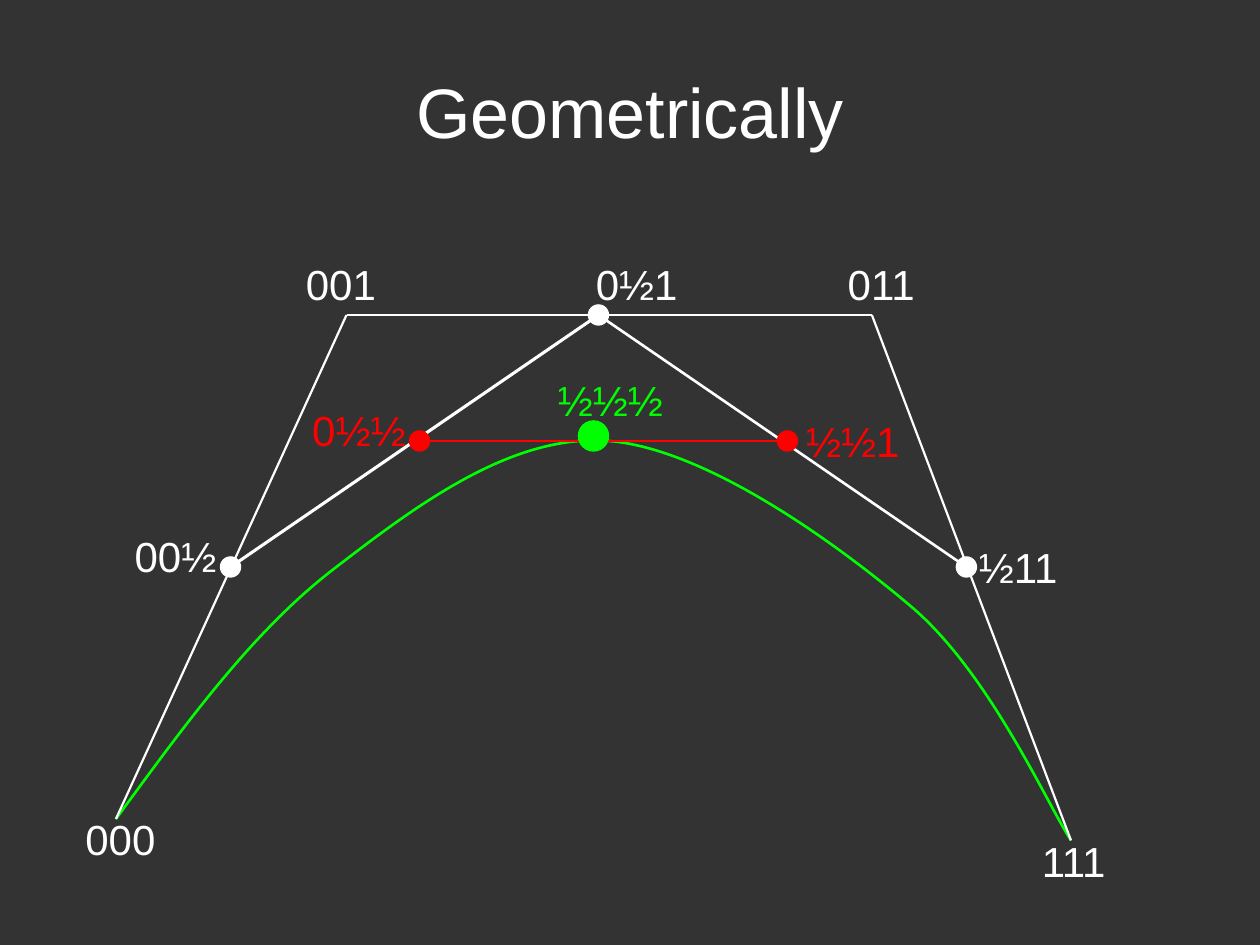
from lxml import etree
from pptx import Presentation
from pptx.dml.color import RGBColor
from pptx.enum.shapes import MSO_CONNECTOR, MSO_SHAPE
from pptx.enum.text import MSO_ANCHOR, MSO_AUTO_SIZE, PP_ALIGN
from pptx.oxml.ns import qn
from pptx.util import Inches, Pt

LINE = MSO_CONNECTOR.STRAIGHT
OVAL = MSO_SHAPE.OVAL
TOP, MIDDLE = MSO_ANCHOR.TOP, MSO_ANCHOR.MIDDLE
GROW, FIXED = MSO_AUTO_SIZE.SHAPE_TO_FIT_TEXT, MSO_AUTO_SIZE.NONE
LEFT, CENTER = PP_ALIGN.LEFT, PP_ALIGN.CENTER

WHITE, RED, GREEN, DARK = "FFFFFF", "FF0000", "00FF00", "333333"

HULL = [(0.42, 4.5), (2.25, 0.5), (6.42, 0.5), (8, 4.67)]
MIDS = [(1.33, 2.5), (4.25, 0.5), (7.17, 2.5)]
INNER = [(2.83, 1.5), (5.75, 1.5)]
PEAK = (4.21, 1.46)
CURVE = [
    (0.42, 4.5),
    (0.97, 3.75), (1.51, 3), (2.17, 2.5),
    (2.82, 2), (3.57, 1.44), (4.33, 1.5),
    (5.1, 1.56), (6.14, 2.31), (6.75, 2.83),
    (7.36, 3.36), (7.81, 4.38), (8, 4.67),
]
LABELS = [
    ("00½", 0.47, 2.16, 0.85, WHITE),
    ("0½1", 4.13, 0, 0.85, WHITE),
    ("½11", 7.17, 2.25, 0.85, WHITE),
    ("0½½", 1.88, 1.16, 0.94, RED),
    ("½½1", 5.8, 1.25, 0.94, RED),
    ("½½½", 3.83, 0.92, 1.1, GREEN),
    ("000", 0.08, 4.41, 0.76, WHITE),
    ("111", 7.67, 4.58, 0.76, WHITE),
    ("001", 1.83, 0, 0.76, WHITE),
    ("011", 6.13, 0, 0.76, WHITE),
]


def color(code):
    return RGBColor.from_string(code)


def add_text(slide, text, x, y, w, h, size=24, ink=WHITE,
             align=LEFT, anchor=TOP, wrap=False):
    box = slide.shapes.add_textbox(Inches(x), Inches(y), Inches(w), Inches(h))
    frame = box.text_frame
    frame.word_wrap = wrap
    frame.auto_size = FIXED if wrap else GROW
    frame.vertical_anchor = anchor
    para = frame.paragraphs[0]
    para.alignment = align
    run = para.add_run()
    run.text = text
    run.font.name = "Arial"
    run.font.size = Pt(size)
    run.font.color.rgb = color(ink)


def add_line(slide, start, end, ink, width):
    ends = [Inches(v) for v in (*start, *end)]
    line = slide.shapes.add_connector(LINE, *ends)
    line.line.color.rgb = color(ink)
    line.line.width = Pt(width)
    etree.SubElement(line._element.spPr, qn("a:effectLst"))


def add_dot(slide, point, size, ink):
    x, y = point
    dot = slide.shapes.add_shape(
        OVAL, Inches(x - size / 2), Inches(y - size / 2),
        Inches(size), Inches(size))
    dot.shadow.inherit = False
    dot.fill.solid()
    dot.fill.fore_color.rgb = color(ink)
    dot.line.fill.background()


def add_curve(slide, points, ink, width):
    spots = [(Inches(x), Inches(y)) for x, y in points]
    form = slide.shapes.build_freeform(*spots[0])
    form.add_line_segments(spots[1:], close=False)
    curve = form.convert_to_shape()
    curve.shadow.inherit = False
    curve.fill.background()
    curve.line.color.rgb = color(ink)
    curve.line.width = Pt(width)
    steps = list(curve._element.iter(qn("a:lnTo")))
    for i in range(0, len(steps), 3):
        bend = etree.SubElement(steps[i].getparent(), qn("a:cubicBezTo"))
        for step in steps[i:i + 3]:
            bend.append(step[0])
            step.getparent().remove(step)


def add_title(slide, x, y, w, h):
    add_text(slide, "Geometrically", x, y, w, h, size=40,
             align=CENTER, anchor=MIDDLE, wrap=True)


def add_figure(slide, left, top):
    def shift(points):
        return [(left + x, top + y) for x, y in points]

    hull, mids, inner = shift(HULL), shift(MIDS), shift(INNER)
    add_curve(slide, shift(CURVE), GREEN, 1.5)
    for start, end, width in zip(mids, mids[1:], (1.75, 1.5)):
        add_line(slide, start, end, WHITE, width)
    for start, end in zip(hull, hull[1:]):
        add_line(slide, start, end, WHITE, 1.25)
    add_line(slide, *inner, RED, 1.5)
    for points, size, ink in ((mids, 0.17, WHITE), (inner, 0.17, RED),
                              (shift([PEAK]), 0.25, GREEN)):
        for point in points:
            add_dot(slide, point, size, ink)
    for text, x, y, w, ink in LABELS:
        add_text(slide, text, left + x, top + y, w, 0.5, ink=ink)


def main():
    deck = Presentation()
    deck.slide_width, deck.slide_height = Inches(10), Inches(7.5)
    slide = deck.slides.add_slide(deck.slide_layouts[6])
    slide.background.fill.solid()
    slide.background.fill.fore_color.rgb = color(DARK)
    add_title(slide, 0.75, 0.42, 8.5, 0.92)
    add_figure(slide, 0.5, 2)
    deck.save("out.pptx")


if __name__ == "__main__":
    main()
